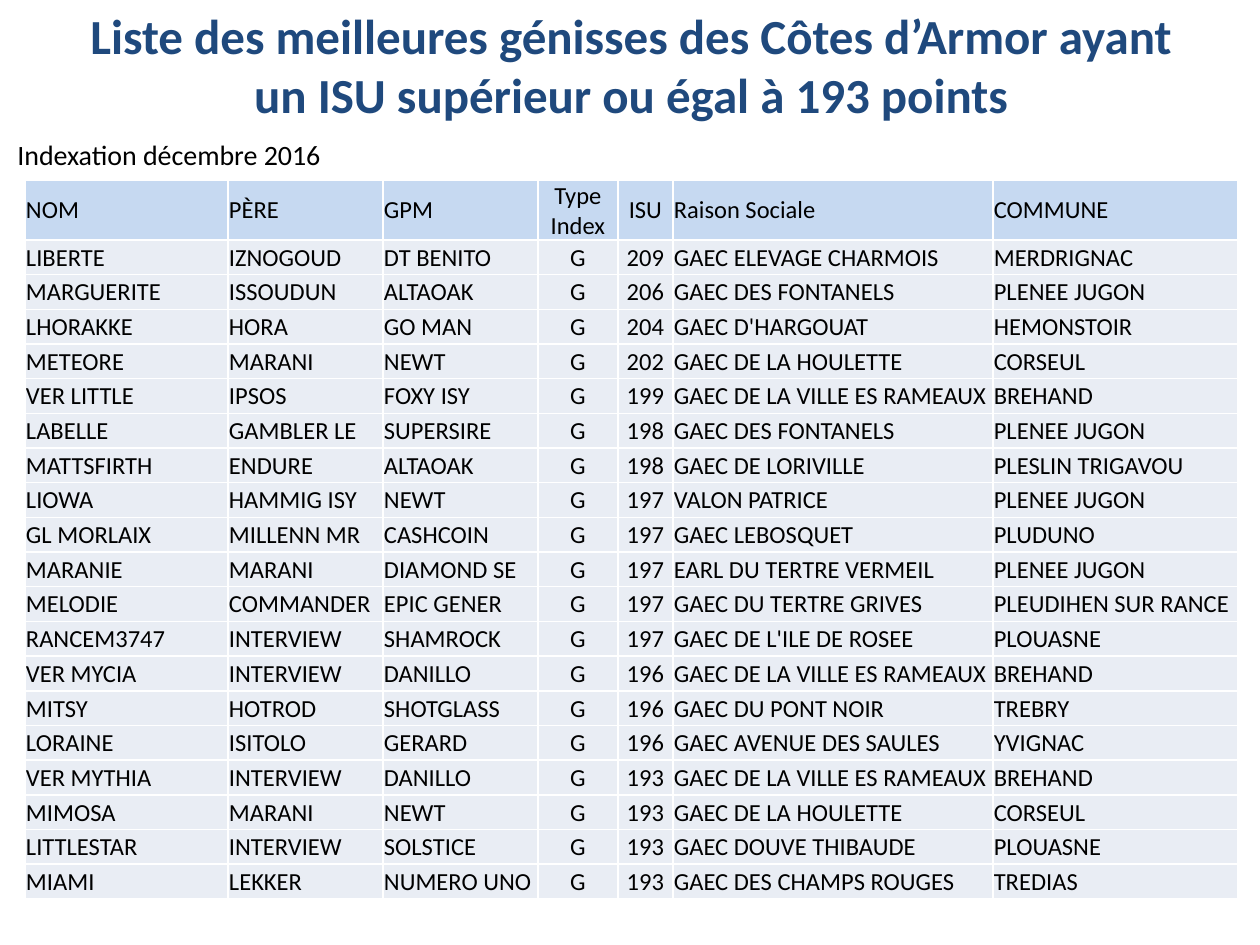
from lxml import etree
from pptx import Presentation
from pptx.dml.color import RGBColor
from pptx.enum.text import MSO_ANCHOR, PP_ALIGN
from pptx.oxml.ns import qn
from pptx.util import Emu, Pt

PX = 914400 // 126
FONT = "Calibri"
LEFT, CENTER = PP_ALIGN.LEFT, PP_ALIGN.CENTER
TOP, MIDDLE = MSO_ANCHOR.TOP, MSO_ANCHOR.MIDDLE

NAVY = RGBColor(0x1F, 0x49, 0x7D)
BLACK = RGBColor(0, 0, 0)
WHITE = RGBColor(0xFF, 0xFF, 0xFF)
HEADER_BLUE = RGBColor(0xC6, 0xD9, 0xF1)
ROW_GREY = RGBColor(0xE9, 0xED, 0xF4)

COLUMN_WIDTHS = [203, 155, 155, 80, 55, 320, 245]
CENTERED_COLUMNS = (3, 4)
HEADER_HEIGHT = 60
BODY_HEIGHT = 659
INDEX_TYPE = "G"

HEADER = ["NOM", "PÈRE", "GPM", "Type\nIndex", "ISU", "Raison Sociale", "COMMUNE"]
HEIFERS = [
    ("LIBERTE", "IZNOGOUD", "DT BENITO", 209, "GAEC ELEVAGE CHARMOIS", "MERDRIGNAC"),
    ("MARGUERITE", "ISSOUDUN", "ALTAOAK", 206, "GAEC DES FONTANELS", "PLENEE JUGON"),
    ("LHORAKKE", "HORA", "GO MAN", 204, "GAEC D'HARGOUAT", "HEMONSTOIR"),
    ("METEORE", "MARANI", "NEWT", 202, "GAEC DE LA HOULETTE", "CORSEUL"),
    ("VER LITTLE", "IPSOS", "FOXY ISY", 199, "GAEC DE LA VILLE ES RAMEAUX", "BREHAND"),
    ("LABELLE", "GAMBLER LE", "SUPERSIRE", 198, "GAEC DES FONTANELS", "PLENEE JUGON"),
    ("MATTSFIRTH", "ENDURE", "ALTAOAK", 198, "GAEC DE LORIVILLE", "PLESLIN TRIGAVOU"),
    ("LIOWA", "HAMMIG ISY", "NEWT", 197, "VALON PATRICE", "PLENEE JUGON"),
    ("GL MORLAIX", "MILLENN MR", "CASHCOIN", 197, "GAEC LEBOSQUET", "PLUDUNO"),
    ("MARANIE", "MARANI", "DIAMOND SE", 197, "EARL DU TERTRE VERMEIL", "PLENEE JUGON"),
    ("MELODIE", "COMMANDER", "EPIC GENER", 197, "GAEC DU TERTRE GRIVES", "PLEUDIHEN SUR RANCE"),
    ("RANCEM3747", "INTERVIEW", "SHAMROCK", 197, "GAEC DE L'ILE DE ROSEE", "PLOUASNE"),
    ("VER MYCIA", "INTERVIEW", "DANILLO", 196, "GAEC DE LA VILLE ES RAMEAUX", "BREHAND"),
    ("MITSY", "HOTROD", "SHOTGLASS", 196, "GAEC DU PONT NOIR", "TREBRY"),
    ("LORAINE", "ISITOLO", "GERARD", 196, "GAEC AVENUE DES SAULES", "YVIGNAC"),
    ("VER MYTHIA", "INTERVIEW", "DANILLO", 193, "GAEC DE LA VILLE ES RAMEAUX", "BREHAND"),
    ("MIMOSA", "MARANI", "NEWT", 193, "GAEC DE LA HOULETTE", "CORSEUL"),
    ("LITTLESTAR", "INTERVIEW", "SOLSTICE", 193, "GAEC DOUVE THIBAUDE", "PLOUASNE"),
    ("MIAMI", "LEKKER", "NUMERO UNO", 193, "GAEC DES CHAMPS ROUGES", "TREDIAS"),
]


def px(length):
    return Emu(length * PX)


def write_text(frame, text, size, color, align, bold=False):
    frame.text = text
    for paragraph in frame.paragraphs:
        paragraph.alignment = align
        font = paragraph.font
        font.name, font.size, font.bold = FONT, Pt(size), bold
        font.color.rgb = color


def add_label(slide, box, text, size, color, align, anchor, bold=False):
    frame = slide.shapes.add_textbox(*map(px, box)).text_frame
    frame.word_wrap = True
    frame.vertical_anchor = anchor
    write_text(frame, text, size, color, align, bold)


def add_borders(cell, color):
    properties = cell._tc.get_or_add_tcPr()
    for side in ("a:lnL", "a:lnR", "a:lnT", "a:lnB"):
        line = etree.SubElement(properties, qn(side), w=str(Pt(1)))
        fill = etree.SubElement(line, qn("a:solidFill"))
        etree.SubElement(fill, qn("a:srgbClr"), val=str(color))


def fill_cell(cell, text, fill, align):
    cell.margin_left = cell.margin_right = cell.margin_top = px(1)
    cell.margin_bottom = 0
    cell.vertical_anchor = MIDDLE
    add_borders(cell, WHITE)
    cell.fill.solid()
    cell.fill.fore_color.rgb = fill
    write_text(cell.text_frame, text, 14, BLACK, align)


def add_ranking(slide, left, top):
    rows = [HEADER] + [(*heifer[:3], INDEX_TYPE, *heifer[3:]) for heifer in HEIFERS]
    ranking = slide.shapes.add_table(
        len(rows), len(HEADER), px(left), px(top),
        px(sum(COLUMN_WIDTHS)), px(HEADER_HEIGHT + BODY_HEIGHT),
    ).table
    ranking.first_row = ranking.horz_banding = False
    for column, width in zip(ranking.columns, COLUMN_WIDTHS):
        column.width = px(width)
    for r, values in enumerate(rows):
        ranking.rows[r].height = px(BODY_HEIGHT) // len(HEIFERS) if r else px(HEADER_HEIGHT)
        for c, value in enumerate(values):
            align = CENTER if c in CENTERED_COLUMNS else LEFT
            fill_cell(ranking.cell(r, c), str(value), ROW_GREY if r else HEADER_BLUE, align)


def main():
    presentation = Presentation()
    presentation.slide_width, presentation.slide_height = px(1260), px(945)
    slide = presentation.slides.add_slide(presentation.slide_layouts[6])
    add_label(
        slide, (64, 16, 1134, 97),
        "Liste des meilleures génisses des Côtes d’Armor ayant un ISU supérieur ou égal à 193 points",
        28, NAVY, CENTER, MIDDLE, bold=True,
    )
    add_label(slide, (5, 131, 367, 44), "Indexation décembre 2016", 16, BLACK, LEFT, TOP)
    add_ranking(slide, 25, 180)
    presentation.save("out.pptx")


if __name__ == "__main__":
    main()
